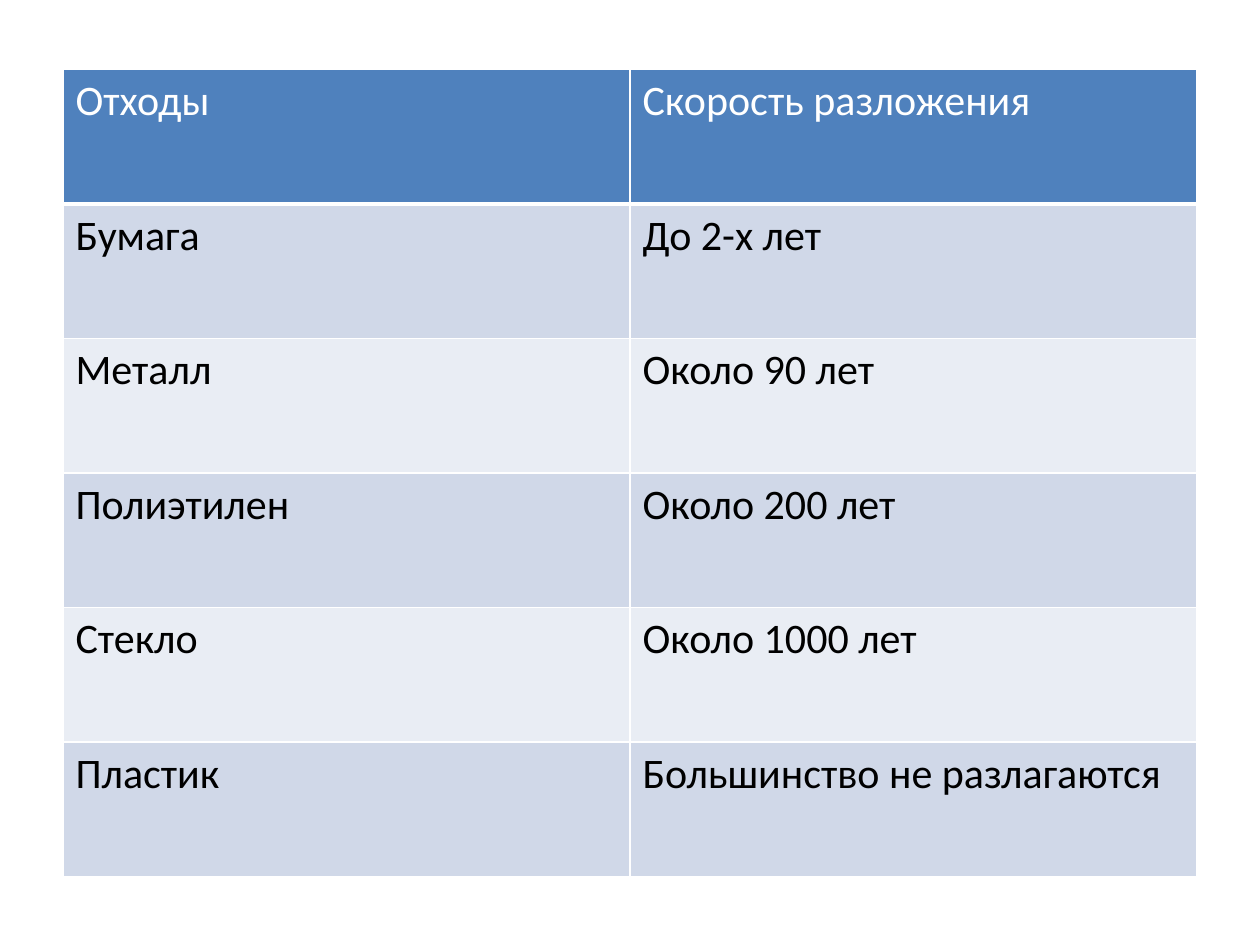
from dataclasses import dataclass

from lxml import etree
from pptx import Presentation
from pptx import util as u
from pptx.dml.color import RGBColor
from pptx.oxml import ns


@dataclass(frozen=True)
class Theme:
    font: str = "Calibri"
    text_size: int = 24
    header_fill: str = "4F81BD"
    header_text: str = "FFFFFF"
    body_text: str = "000000"
    bands: tuple = ("D0D8E8", "E9EDF4")
    border: str = "FFFFFF"
    thin: int = 1
    thick: int = 3


WASTE_DECAY = [
    ("Отходы", "Скорость разложения"),
    ("Бумага", "До 2-х лет"),
    ("Металл", "Около 90 лет"),
    ("Полиэтилен", "Около 200 лет"),
    ("Стекло", "Около 1000 лет"),
    ("Пластик", "Большинство не разлагаются"),
]


def write_text(frame, content, *, font, size, color, bold=False):
    run = frame.paragraphs[0].add_run()
    run.text = content
    run.font.name = font
    run.font.size = u.Pt(size)
    run.font.bold = bold
    run.font.color.rgb = RGBColor.from_string(color)


def set_borders(cell, color, **widths):
    """Draw cell sides; widths are points, given in the order L, R, T, B."""
    properties = cell._tc.get_or_add_tcPr()
    for side, width in widths.items():
        line = etree.SubElement(properties, ns.qn(f"a:ln{side}"), w=str(u.Pt(width)))
        fill = etree.SubElement(line, ns.qn("a:solidFill"))
        etree.SubElement(fill, ns.qn("a:srgbClr"), val=color)


class SlideBuilder:
    def __init__(self, slide, theme):
        self.slide = slide
        self.theme = theme

    def add_table(self, rows, left, top, width, height):
        table = self.slide.shapes.add_table(
            len(rows), len(rows[0]),
            u.Inches(left), u.Inches(top), u.Inches(width), u.Inches(height),
        ).table
        for row_index, row in enumerate(rows):
            for column_index, content in enumerate(row):
                self.format_cell(table.cell(row_index, column_index), row_index, content)

    def format_cell(self, cell, row_index, content):
        theme = self.theme
        is_header = row_index == 0
        set_borders(
            cell, theme.border, L=theme.thin, R=theme.thin,
            T=theme.thick if row_index == 1 else theme.thin,
            B=theme.thick if is_header else theme.thin,
        )
        band = theme.bands[(row_index - 1) % len(theme.bands)]
        cell.fill.solid()
        cell.fill.fore_color.rgb = RGBColor.from_string(
            theme.header_fill if is_header else band)
        write_text(
            cell.text_frame, content, font=theme.font, size=theme.text_size,
            color=theme.header_text if is_header else theme.body_text,
        )


def main():
    presentation = Presentation()
    presentation.slide_width = u.Inches(10)
    presentation.slide_height = u.Inches(7.5)
    blank_layout = presentation.slide_layouts[6]
    builder = SlideBuilder(presentation.slides.add_slide(blank_layout), Theme())
    builder.add_table(WASTE_DECAY, left=0.5, top=0.55, width=9, height=6.41)
    presentation.save("out.pptx")


if __name__ == "__main__":
    main()
